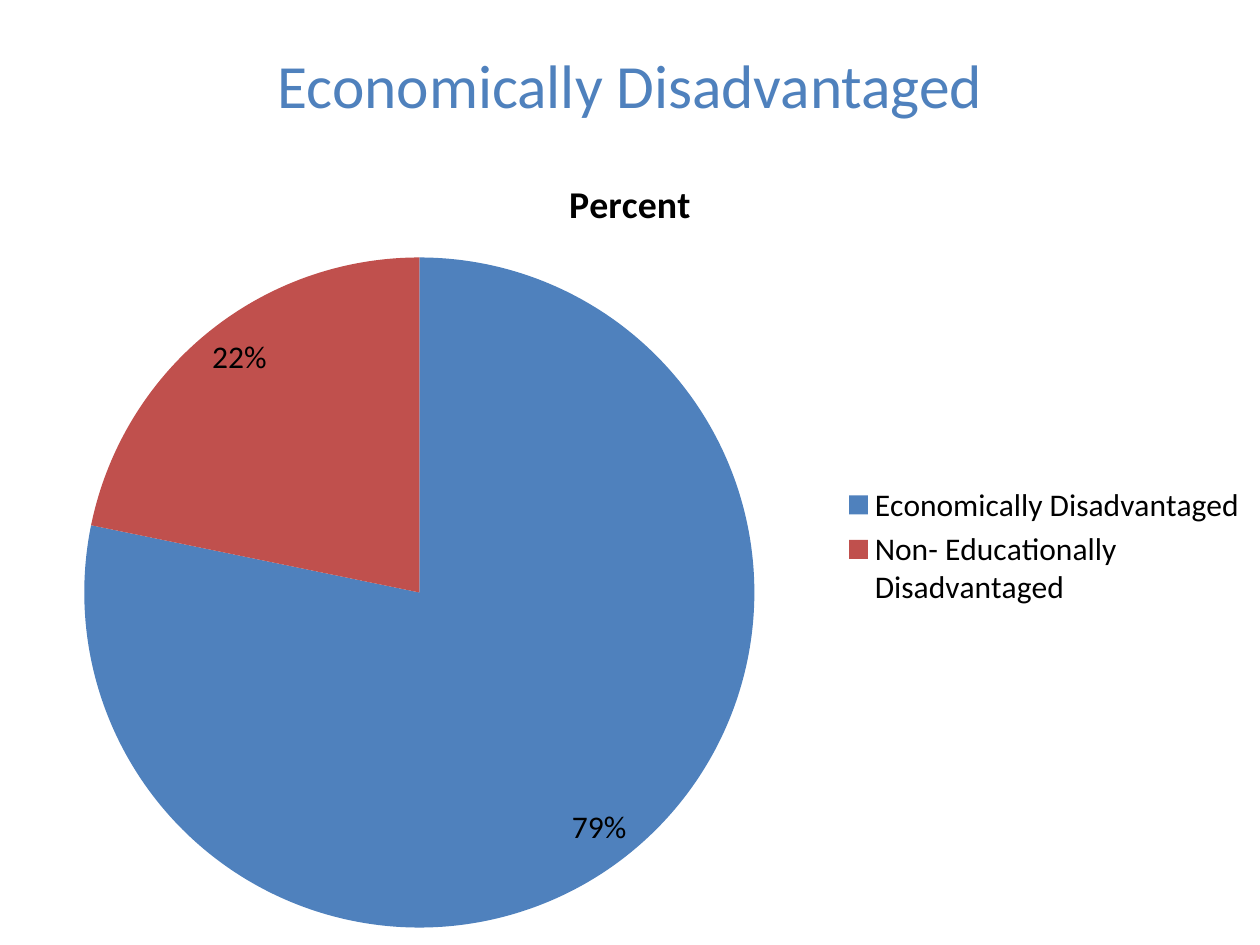
"""Build a slide with a pie chart of economically disadvantaged students."""
import pptx
import pptx.chart.data
import pptx.dml.color
import pptx.enum.chart
import pptx.enum.text
import pptx.util
from pptx.util import Inches

BLUE = pptx.dml.color.RGBColor(0x4F, 0x81, 0xBD)
RED = pptx.dml.color.RGBColor(0xC0, 0x50, 0x4D)
BLACK = pptx.dml.color.RGBColor(0, 0, 0)
FONT = "Calibri"
SHARES = {
    "Economically Disadvantaged": (79, BLUE),
    "Non- Educationally Disadvantaged": (22, RED),
}


def apply_format(target, values):
    """Set each attribute of the target from a dict."""
    for attribute, value in values.items():
        setattr(target, attribute, value)


def format_font(font, size, color, bold=False):
    """Give a font its typeface, size, weight and colour."""
    apply_format(font, {"name": FONT, "size": pptx.util.Pt(size), "bold": bold})
    font.color.rgb = color


def add_heading(slide, wording):
    """Fill and place the title placeholder."""
    heading = slide.shapes.title
    apply_format(heading, {"left": Inches(0), "top": Inches(0.17),
                           "width": Inches(10), "height": Inches(1)})
    frame = heading.text_frame
    apply_format(frame, {"text": wording, "word_wrap": True,
                         "vertical_anchor": pptx.enum.text.MSO_ANCHOR.MIDDLE})
    frame.paragraphs[0].alignment = pptx.enum.text.PP_ALIGN.CENTER
    format_font(frame.paragraphs[0].runs[0].font, 35.1, BLUE)


def add_share_pie(slide, measure, shares):
    """Add the pie with its title, legend and percent labels."""
    share_data = pptx.chart.data.CategoryChartData()
    share_data.categories = list(shares)
    share_data.add_series(measure, [share for share, _ in shares.values()])
    pie = slide.shapes.add_chart(
        pptx.enum.chart.XL_CHART_TYPE.PIE, Inches(0), Inches(1.17),
        Inches(10), Inches(6.33), share_data).chart
    format_font(pie.font, 18, BLACK)

    pie.has_title = True
    pie.chart_title.include_in_layout = False
    pie.chart_title.text_frame.text = measure
    measure_run = pie.chart_title.text_frame.paragraphs[0].runs[0]
    format_font(measure_run.font, 21.6, BLACK, bold=True)

    pie.has_legend = True
    apply_format(pie.legend, {
        "position": pptx.enum.chart.XL_LEGEND_POSITION.RIGHT,
        "include_in_layout": False})
    format_font(pie.legend.font, 18, BLACK)

    plot = pie.plots[0]
    apply_format(plot, {"vary_by_categories": True, "has_data_labels": True})
    apply_format(plot.data_labels, {
        "show_value": True, "number_format": '0"%"',
        "number_format_is_linked": False,
        "position": pptx.enum.chart.XL_LABEL_POSITION.INSIDE_END})
    format_font(plot.data_labels.font, 18, BLACK)

    for index, (_, color) in enumerate(shares.values()):
        slice_format = plot.series[0].points[index].format
        slice_format.fill.solid()
        slice_format.fill.fore_color.rgb = color
        slice_format.line.fill.background()


def main():
    """Create the presentation and save it."""
    deck = pptx.Presentation()
    apply_format(deck, {"slide_width": Inches(10), "slide_height": Inches(7.5)})
    slide = deck.slides.add_slide(deck.slide_layouts[5])
    add_share_pie(slide, "Percent", SHARES)
    add_heading(slide, "Economically Disadvantaged")
    deck.save("out.pptx")


if __name__ == "__main__":
    main()
